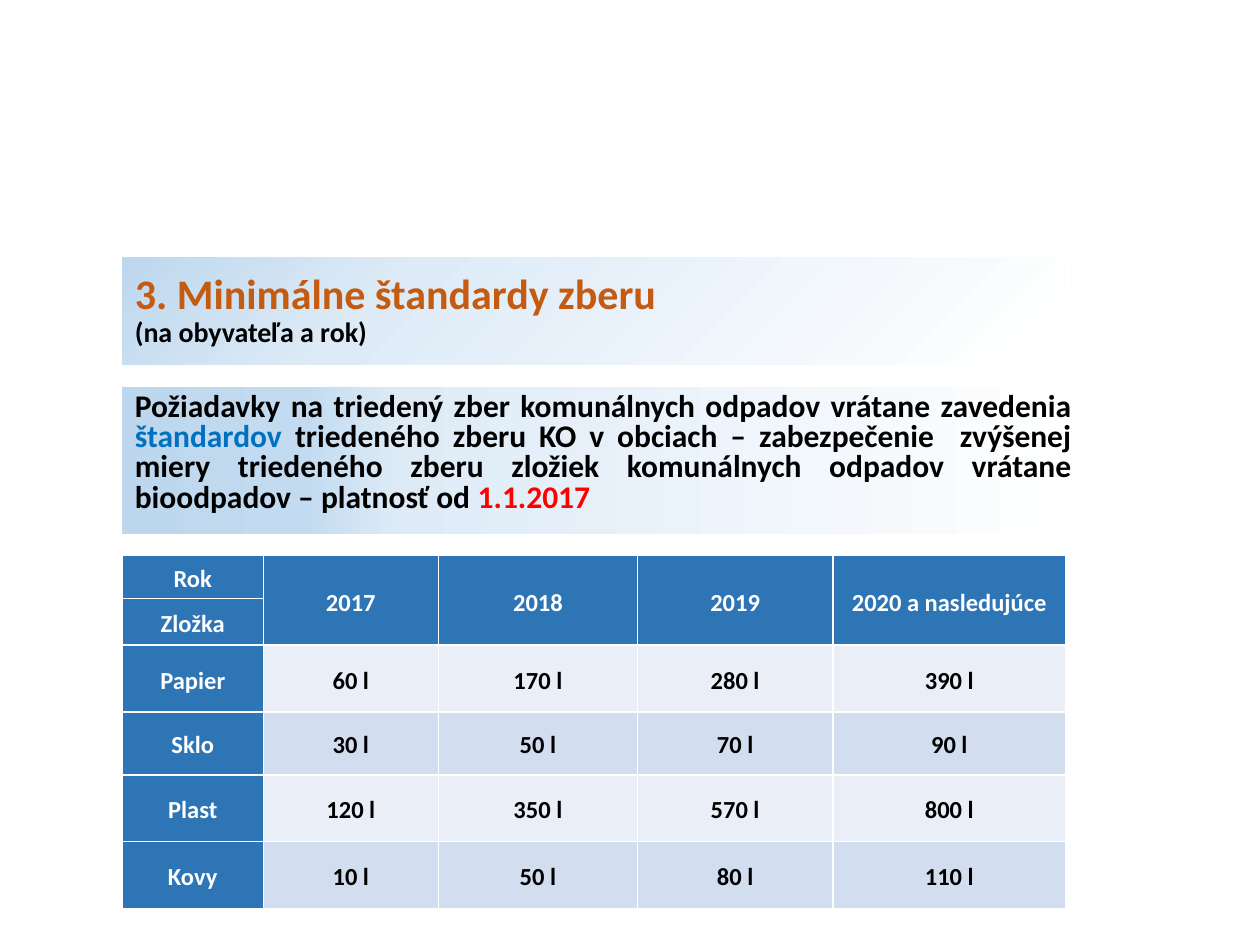
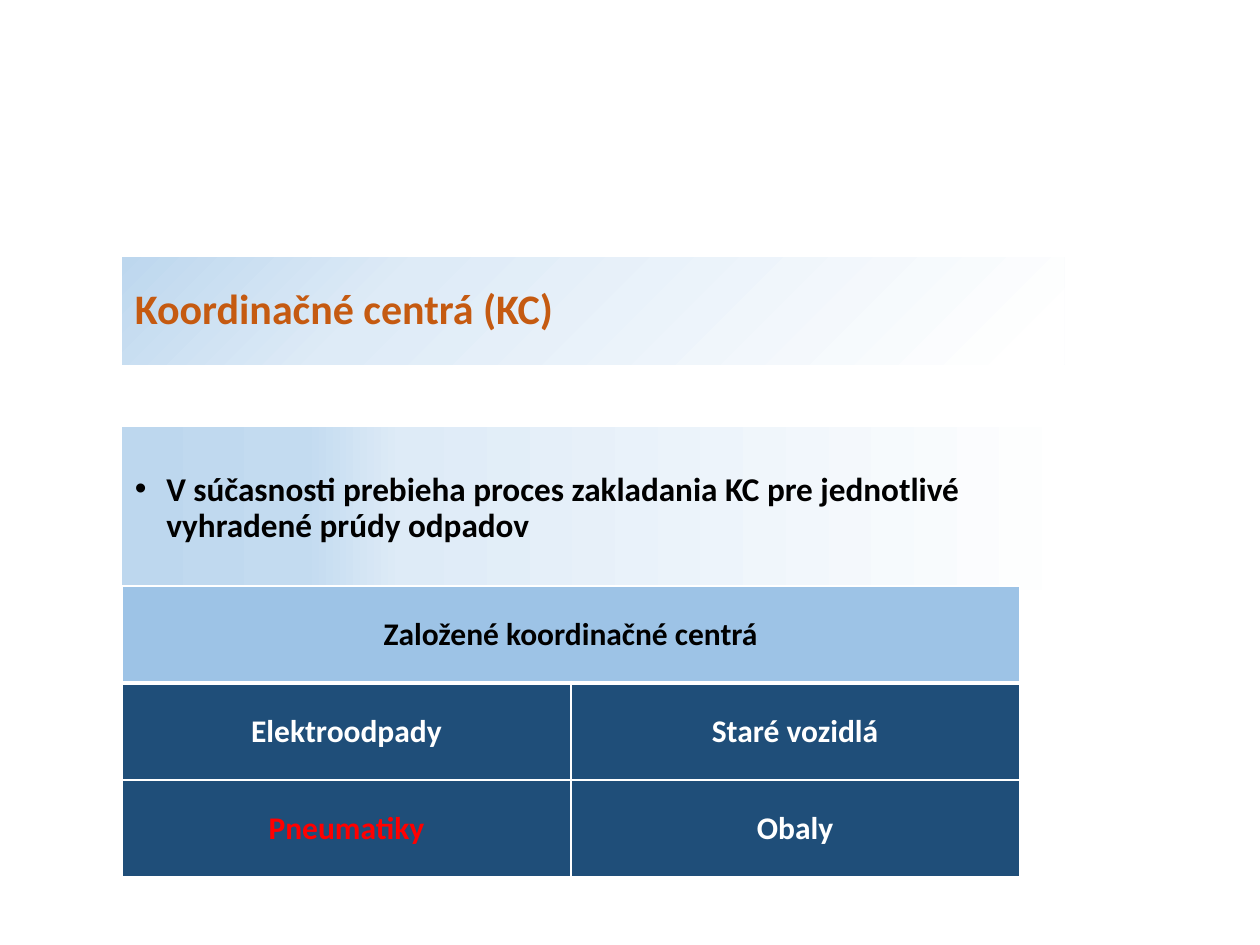
import dataclasses
import pptx
import pptx.util
import pptx.oxml
import pptx.oxml.ns
import pptx.dml.color
import pptx.enum.text

Inches, Pt = pptx.util.Inches, pptx.util.Pt
ALIGN, ANCHOR = pptx.enum.text.PP_ALIGN, pptx.enum.text.MSO_ANCHOR


@dataclasses.dataclass(frozen=True)
class Theme:
    face: str = "Calibri"
    white: str = "FFFFFF"
    black: str = "000000"
    red: str = "FF0000"
    rust: str = "C55A11"
    azure: str = "0070C0"
    blue: str = "2E75B6"
    navy: str = "1F4E79"
    sky: str = "9DC3E6"
    bands: tuple = ("EAEFF7", "D2DEEF")
    title: int = 24
    sub: int = 16
    lead: int = 18
    point: int = 19
    label: int = 14


T = Theme()
HEAD = (0.97, 2.04, 7.48, 0.85)
# Gradient stops (percent, colour) and the direction element
CORNER = ([(3, T.white), (71, "DEEBF7"), (100, "BDD7EE")],
          '<a:path path="circle"><a:fillToRect l="100000" t="100000"/></a:path>')
ACROSS = ([(0, "BDD7EE"), (19, "C3DBF0"), (29, "DEEBF7"), (100, T.white)],
          '<a:lin ang="0" scaled="0"/>')


def node(text):
    """Make an XML element in the drawing namespace."""
    tag, rest = text.split(">", 1)
    return pptx.oxml.parse_xml(f"{tag} {pptx.oxml.ns.nsdecls('a')}>{rest}")


def apply(item, form):
    for name, value in form.items():
        setattr(item, name, value)


def write(para, runs, size, **form):
    """Fill a paragraph with (text, colour) runs of one size."""
    apply(para, form)
    for text, tint in runs:
        run = para.add_run()
        run.text = text
        apply(run.font, dict(name=T.face, size=Pt(size), bold=True))
        run.font.color.rgb = pptx.dml.color.RGBColor.from_string(tint)


def panel(shape, box, blend, anchor):
    """Place a placeholder and give it a gradient fill."""
    apply(shape, dict(zip(("left", "top", "width", "height"), map(Inches, box))))
    stops, course = blend
    marks = "".join(f'<a:gs pos="{pos * 1000}"><a:srgbClr val="{tint}"/></a:gs>'
                    for pos, tint in stops)
    shape._element.spPr.append(node(
        f'<a:gradFill rotWithShape="1"><a:gsLst>{marks}</a:gsLst>{course}</a:gradFill>'))
    frame = shape.text_frame
    apply(frame, dict(word_wrap=True, vertical_anchor=anchor,
                      auto_size=pptx.enum.text.MSO_AUTO_SIZE.NONE))
    return frame


def header(slide, box, lines):
    """Title band; each line is (text, colour, size)."""
    frame = panel(slide.shapes.title, box, CORNER, ANCHOR.MIDDLE)
    for i, (text, tint, size) in enumerate(lines):
        para = frame.add_paragraph() if i else frame.paragraphs[0]
        write(para, [(text, tint)], size, alignment=ALIGN.LEFT,
              line_spacing=0.9, space_before=Pt(0))


def body(slide, box, runs, size, anchor, bullet=False, **form):
    """Text band below the title."""
    para = panel(slide.placeholders[1], box, ACROSS, anchor).paragraphs[0]
    props = para._p.get_or_add_pPr()
    dent = Inches(0.25) if bullet else 0
    props.set("marL", str(dent))
    props.set("indent", str(-dent))
    props.append(node('<a:buChar char="•"></a:buChar>' if bullet
                      else "<a:buNone></a:buNone>"))
    write(para, runs, size, space_before=Pt(0), **form)


def grid(slide, box, wide, tall):
    """Plain table with the given column widths and row heights."""
    frame = slide.shapes.add_table(len(tall), len(wide), *map(Inches, box))
    table = frame.table
    apply(table, dict(first_row=False, horz_banding=False))
    for col, size in zip(table.columns, wide):
        col.width = Inches(size)
    for row, size in zip(table.rows, tall):
        row.height = Inches(size)
    return table


def paint(cell, text, tint, fill, size, rules=(1, 1, 1, 1), **form):
    """Style a cell; rules are the left, right, top, bottom widths."""
    props = cell._tc.get_or_add_tcPr()
    for side, width in zip("LRTB", rules):
        props.append(node(f'<a:ln{side} w="{Pt(width)}"><a:solidFill>'
                          f'<a:srgbClr val="{T.white}"/></a:solidFill></a:ln{side}>'))
    cell.fill.solid()
    cell.fill.fore_color.rgb = pptx.dml.color.RGBColor.from_string(fill)
    cell.vertical_anchor = ANCHOR.MIDDLE
    if text:
        write(cell.text_frame.paragraphs[0], [(text, tint)], size,
              alignment=ALIGN.CENTER, **form)


def quotas(slide, box):
    """Yearly litres for each kind of waste."""
    rows = [["Rok", "2017", "2018", "2019", "2020 a nasledujúce"],
            ["Zložka", "", "", "", ""],
            ["Papier", "60 l", "170 l", "280 l", "390 l"],
            ["Sklo", "30 l", "50 l", "70 l", "90 l"],
            ["Plast", "120 l", "350 l", "570 l", "800 l"],
            ["Kovy", "10 l", "50 l", "80 l", "110 l"]]
    table = grid(slide, box, (1.12, 1.39, 1.58, 1.55, 1.85),
                 (0.34, 0.37, 0.53, 0.5, 0.53, 0.53))
    for c in range(1, 5):
        table.cell(0, c).merge(table.cell(1, c))
    for r, row in enumerate(rows):
        for c, text in enumerate(row):
            cell = table.cell(r, c)
            apply(cell, dict(margin_left=Inches(0.06), margin_right=Inches(0.06),
                             margin_top=0, margin_bottom=0))
            head = r < 2 or c == 0
            paint(cell, text, T.white if head else T.black,
                  T.blue if head else T.bands[r % 2], T.label,
                  line_spacing=1.15, space_after=Pt(10))


def centres(slide, box):
    """Centres founded so far."""
    rows = [["Založené koordinačné centrá", ""],
            ["Elektroodpady", "Staré vozidlá"],
            ["Pneumatiky", "Obaly"]]
    table = grid(slide, box, [box[2] / 2] * 2, [box[3] / 3] * 3)
    table.cell(0, 0).merge(table.cell(0, 1))
    rules = [(1, 1, 1, 3), (1, 1, 3, 1), (1, 1, 1, 1)]
    for r, row in enumerate(rows):
        for c, text in enumerate(row):
            tint = T.red if text == "Pneumatiky" else T.white if r else T.black
            paint(table.cell(r, c), text, tint, T.navy if r else T.sky,
                  T.lead, rules[r])


def norms(slide):
    """Minimum standards slide."""
    header(slide, HEAD, [("3. Minimálne štandardy zberu", T.rust, T.title),
                         ("(na obyvateľa a rok)", T.black, T.sub)])
    runs = [("Požiadavky na triedený zber komunálnych odpadov vrátane zavedenia ", T.black),
            ("štandardov", T.azure),
            (" triedeného zberu KO v obciach – zabezpečenie  zvýšenej miery triedeného "
             "zberu zložiek komunálnych odpadov vrátane bioodpadov – platnosť od ", T.black),
            ("1.1.2017", T.red)]
    body(slide, (0.97, 3.07, 7.64, 1.17), runs, T.lead, ANCHOR.TOP,
         alignment=ALIGN.JUSTIFY, line_spacing=0.8)
    quotas(slide, (0.97, 4.41, 7.49, 2.8))


def hubs(slide):
    """Coordination centres slide."""
    header(slide, HEAD, [("Koordinačné centrá (KC)", T.rust, T.title)])
    runs = [("V súčasnosti prebieha proces zakladania KC pre jednotlivé "
             "vyhradené prúdy odpadov", T.black)]
    body(slide, (0.97, 3.39, 7.64, 1.29), runs, T.point, ANCHOR.MIDDLE,
         bullet=True, alignment=ALIGN.LEFT, line_spacing=0.9)
    centres(slide, (0.97, 4.65, 7.12, 2.31))


def main():
    deck = pptx.Presentation()
    apply(deck, dict(slide_width=Inches(10), slide_height=Inches(7.5)))
    for build in (norms, hubs):
        build(deck.slides.add_slide(deck.slide_layouts[1]))
    deck.save("out.pptx")


if __name__ == "__main__":
    main()
